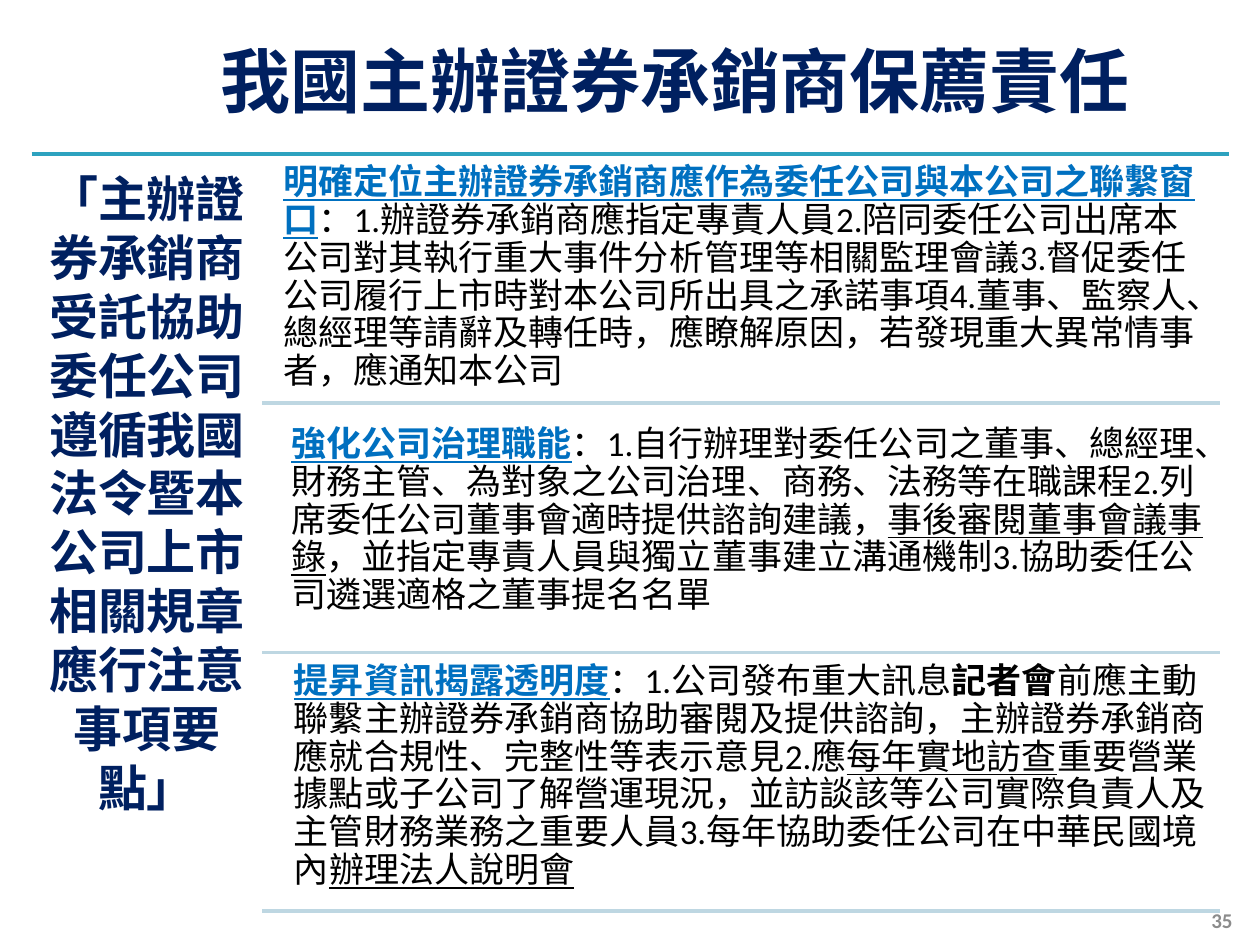
from dataclasses import dataclass

from lxml.etree import SubElement
from pptx import Presentation
from pptx.dml.color import RGBColor
from pptx.enum.shapes import MSO_CONNECTOR
from pptx.enum.text import MSO_ANCHOR, MSO_AUTO_SIZE, PP_ALIGN
from pptx.oxml.ns import qn
from pptx.util import Pt


@dataclass(frozen=True)
class Theme:
    navy: RGBColor = RGBColor.from_string("002060")
    blue: RGBColor = RGBColor.from_string("0070C0")
    black: RGBColor = RGBColor.from_string("000000")
    gray: RGBColor = RGBColor.from_string("8C8C8C")
    teal: RGBColor = RGBColor.from_string("2DA2BF")
    pale: RGBColor = RGBColor.from_string("BED7E2")
    display: str = "Vollkorn"
    body: str = "Calibri"
    title_size: int = 40
    side_size: int = 28
    body_size: int = 20
    number_size: int = 12


theme = Theme()


def add_rule(x1, x2, y, color):
    """Draw a horizontal divider without a shadow."""
    line = s.shapes.add_connector(MSO_CONNECTOR.STRAIGHT, Pt(x1), Pt(y), Pt(x2), Pt(y))
    line.line.color.rgb = color
    line.line.width = Pt(2)
    SubElement(line._element.spPr, qn("a:effectLst"))


def add_text_box(left, top, width, height, inset, name, size, color, bold):
    """Add a wrapping box and return its text frame and styled first paragraph."""
    tf = s.shapes.add_textbox(Pt(left), Pt(top), Pt(width), Pt(height)).text_frame
    tf.word_wrap = True
    tf.margin_left = tf.margin_right = tf.margin_top = tf.margin_bottom = Pt(inset)
    p = tf.paragraphs[0]
    p.font.name, p.font.size, p.font.bold = name, Pt(size), bold
    p.font.color.rgb = color
    return tf, p


prs = Presentation()
prs.slide_width, prs.slide_height = Pt(720), Pt(540)
s = prs.slides.add_slide(prs.slide_layouts[5])

# Title
title = s.shapes.title
title.left, title.top, title.width, title.height = Pt(60), Pt(18), Pt(651.6), Pt(55.7)
tf = title.text_frame
tf.text = "我國主辦證券承銷商保薦責任"
tf.vertical_anchor = MSO_ANCHOR.TOP
tf.auto_size = MSO_AUTO_SIZE.SHAPE_TO_FIT_TEXT
p = tf.paragraphs[0]
p.alignment = PP_ALIGN.CENTER
p.font.name, p.font.size, p.font.bold = theme.display, Pt(theme.title_size), True
p.font.color.rgb = theme.navy

# Regulation name at the left
add_rule(18, 702, 88, theme.teal)
tf, p = add_text_box(18, 88, 132, 439, 8.4, theme.display, theme.side_size, theme.navy, True)
p.alignment = PP_ALIGN.CENTER
p.add_run().text = "「主辦證券承銷商受託協助委任公司遵循我國法令暨本公司上市相關規章應行注意事項要點」"

# Duties: left, top, height, divider below, heading, then (text, style) runs
duties = [
    (156, 88, 135, 230.4, "明確定位主辦證券承銷商應作為委任公司與本公司之聯繫窗口", [
        ("：1.辦證券承銷商應指定專責人員2.陪同委任公司出席本公司對其執行重大事件分析管理等"
         "相關監理會議3.督促委任公司履行上市時對本公司所出具之承諾事項4.董事、監察人、總經理等"
         "請辭及轉任時，應瞭解原因，若發現重大異常情事者，應通知本公司", ""),
    ]),
    (160.5, 237.6, 135, 373, "強化公司治理職能", [
        ("：1.自行辦理對委任公司之董事、總經理、財務主管、為對象之公司治理、商務、法務等"
         "在職課程2.列席委任公司董事會適時提供諮詢建議，", ""),
        ("事後審閱董事會議事錄", "underline"),
        ("，並指定專責人員與獨立董事建立溝通機制3.協助委任公司遴選適格之董事提名名單", ""),
    ]),
    (162, 373, 140, 520.6, "提昇資訊揭露透明度", [
        ("：1.公司發布重大訊息", ""),
        ("記者會", "bold"),
        ("前應主動聯繫主辦證券承銷商協助審閱及提供諮詢，主辦證券承銷商應就合規性、完整性等"
         "表示意見2.應", ""),
        ("每年實地訪查", "underline"),
        ("重要營業據點或子公司了解營運現況，並訪談該等公司實際負責人及主管財務業務之重要人員"
         "3.每年協助委任公司在中華民國境內", ""),
        ("辦理法人說明會", "underline"),
    ]),
]
for left, top, height, rule_y, heading, runs in duties:
    tf, p = add_text_box(left, top, 537, height, 6, theme.body, theme.body_size, theme.black, False)
    p.line_spacing = 0.9
    r = p.add_run()
    r.text = heading
    r.font.bold = r.font.underline = True
    r.font.color.rgb = theme.blue
    for text, style in runs:
        r = p.add_run()
        r.text = text
        if style == "bold":
            r.font.bold = True
        elif style == "underline":
            r.font.underline = True
    add_rule(150, 697, rule_y, theme.pale)

# Slide number
tf, p = add_text_box(666, 511.2, 45.4, 28.8, 7.2, theme.body, theme.number_size, theme.gray, True)
tf.vertical_anchor = MSO_ANCHOR.MIDDLE
p.alignment = PP_ALIGN.RIGHT
p.add_run().text = "35"

prs.save("out.pptx")
